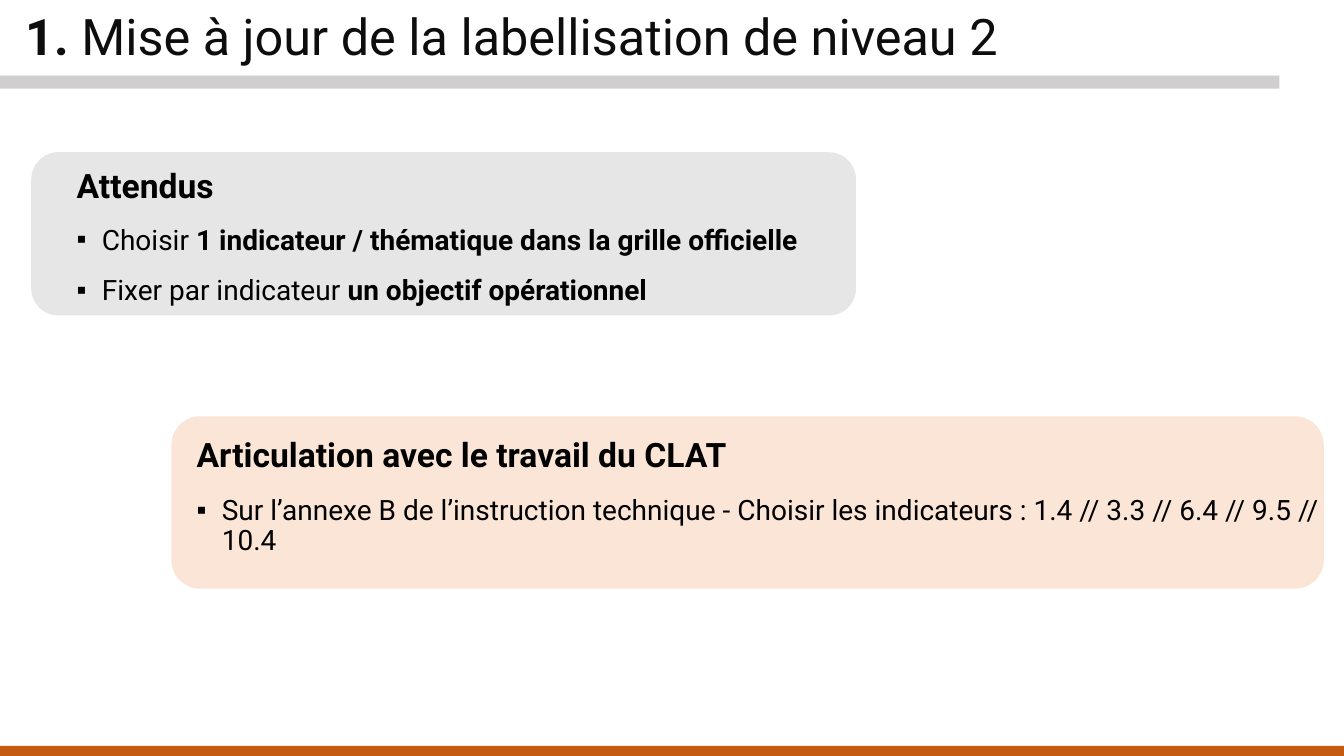
from lxml import etree
from pptx import Presentation
from pptx.dml.color import RGBColor
from pptx.enum.shapes import MSO_SHAPE
from pptx.enum.text import MSO_ANCHOR, MSO_AUTO_SIZE, PP_ALIGN
from pptx.oxml.ns import qn
from pptx.util import Inches, Pt

RECT, ROUNDED = MSO_SHAPE.RECTANGLE, MSO_SHAPE.ROUNDED_RECTANGLE
WIDTH, HEIGHT = 13.33, 7.5
FONT = "Roboto"
COLOURS = {"title": "0D0D0D", "text": "000000", "footer": "C55A11",
           "rule": "D0CECE", "grey": "E7E6E6", "peach": "FBE5D6"}

# Each line of text is a list of (words, bold) spans.
TITLE = [("1. ", True), ("Mise à jour de la labellisation de niveau 2", False)]
BARS = [
    ("footer", (0, HEIGHT - 0.1, WIDTH, 0.1)),
    ("rule", (0, 0.75, 12.69, 0.13)),
]
CARDS = [
    {"fill": "grey", "card": (0.31, 1.51, 8.18, 1.62), "text": (0.66, 1.59, 8.49, 1.42),
     "heading": [("Attendus", True)],
     "items": [
         [("Choisir ", False), ("1 indicateur / thématique dans la grille officielle", True)],
         [("Fixer par indicateur ", False), ("un objectif opérationnel", True)],
     ],
     "item_format": {"alignment": PP_ALIGN.JUSTIFY, "line_spacing": 1.0,
                     "space_before": Pt(6), "space_after": Pt(6)}},
    {"fill": "peach", "card": (1.7, 4.13, 11.43, 1.71), "text": (1.85, 4.25, 11.48, 1.5),
     "heading": [("Articulation avec le travail du CLAT", True)],
     "items": [
         [("Sur l’annexe B de l’instruction technique - Choisir les indicateurs : "
           "1.4 // 3.3 // 6.4 // 9.5 // 10.4", False)],
     ],
     "item_format": {"alignment": PP_ALIGN.LEFT, "line_spacing": 0.9,
                     "space_before": Pt(10), "space_after": Pt(0)}},
]
HEADING_FORMAT = {"alignment": PP_ALIGN.LEFT, "line_spacing": 1.0,
                  "space_before": Pt(6), "space_after": Pt(6)}
TITLE_FORMAT = {"alignment": PP_ALIGN.LEFT, "line_spacing": 0.9, "space_before": Pt(0)}


def set_all(target, values):
    for name, value in values.items():
        setattr(target, name, value)


def place(shape, frame):
    names = ("left", "top", "width", "height")
    set_all(shape, dict(zip(names, map(Inches, frame))))


def add_block(page, kind, frame, colour):
    block = page.shapes.add_shape(kind, *map(Inches, frame))
    block.shadow.inherit = False
    block.fill.solid()
    block.fill.fore_color.rgb = RGBColor.from_string(COLOURS[colour])
    block.line.fill.background()


def prepare(holder, frame, anchor):
    """Move a placeholder, bring it to the front and return its text frame."""
    place(holder, frame)
    holder.element.getparent().append(holder.element)
    set_all(holder.text_frame, {"word_wrap": True, "auto_size": MSO_AUTO_SIZE.NONE,
                                "vertical_anchor": anchor})
    return holder.text_frame


def write(para, spans, size, colour, formats):
    set_all(para, formats)
    for words, bold in spans:
        span = para.add_run()
        span.text = words
        set_all(span.font, {"name": FONT, "size": Pt(size), "bold": bold})
        span.font.color.rgb = RGBColor.from_string(COLOURS[colour])


def set_bullet(para, symbol=None, indent=0):
    properties = para._p.get_or_add_pPr()
    properties.set("marL", str(Inches(indent)))
    properties.set("indent", str(-Inches(indent)))
    if symbol:
        etree.SubElement(properties, qn("a:buChar")).set("char", symbol)
    else:
        etree.SubElement(properties, qn("a:buNone"))


def main():
    deck = Presentation()
    deck.slide_width, deck.slide_height = Inches(WIDTH), Inches(HEIGHT)
    page = deck.slides.add_slide(deck.slide_layouts[3])
    title, *bodies = list(page.placeholders)

    for colour, frame in BARS:
        add_block(page, RECT, frame, colour)

    frame = prepare(title, (0.15, 0.11, WIDTH - 0.15, 0.55), MSO_ANCHOR.MIDDLE)
    write(frame.paragraphs[0], TITLE, 36, "title", TITLE_FORMAT)

    for card, body in zip(CARDS, bodies):
        add_block(page, ROUNDED, card["card"], card["fill"])
        frame = prepare(body, card["text"], MSO_ANCHOR.TOP)
        heading = frame.paragraphs[0]
        write(heading, card["heading"], 24, "text", HEADING_FORMAT)
        set_bullet(heading)
        for item in card["items"]:
            para = frame.add_paragraph()
            write(para, item, 20, "text", card["item_format"])
            set_bullet(para, "▪", 0.25)

    deck.save("out.pptx")


if __name__ == "__main__":
    main()
